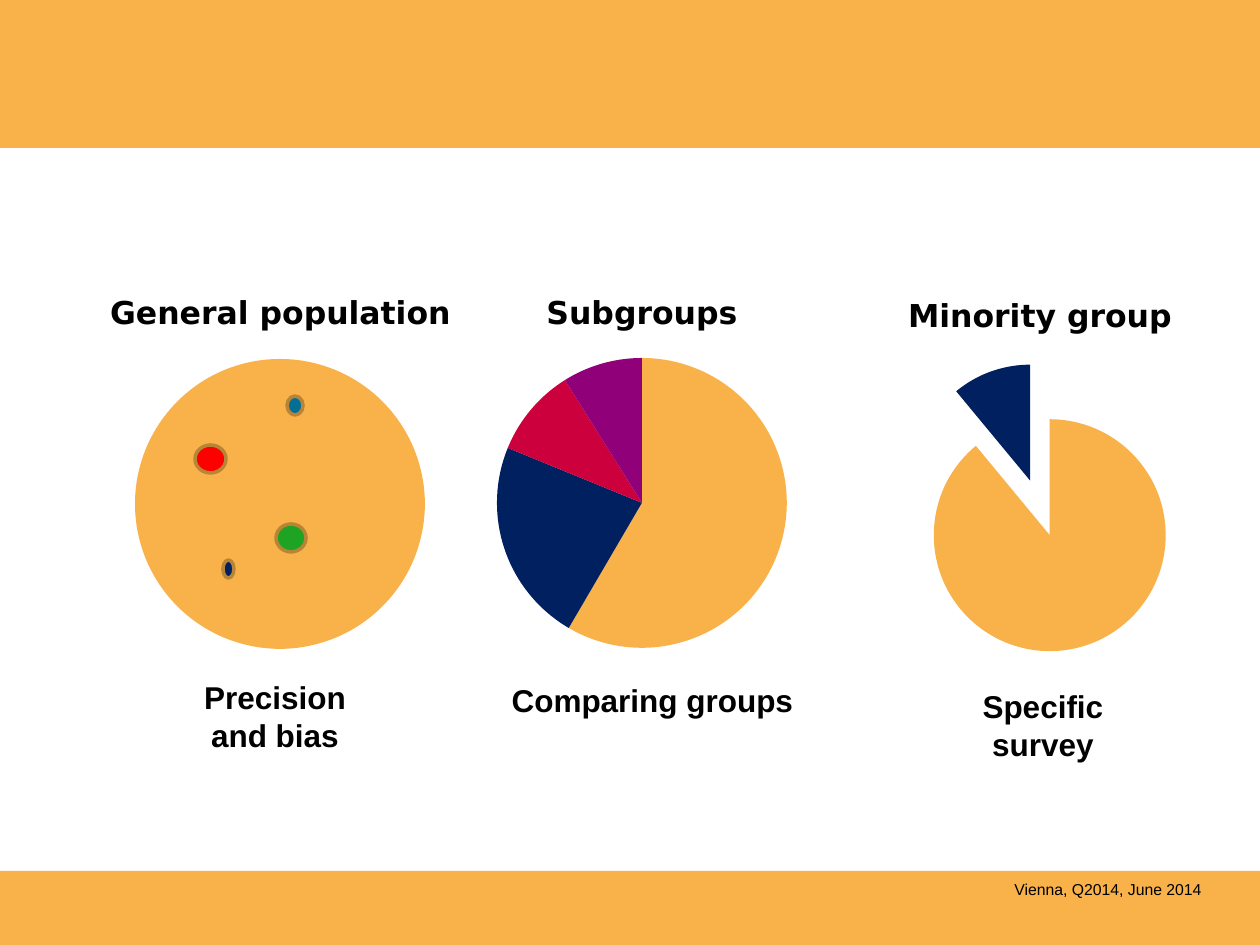
from dataclasses import dataclass

from lxml import etree
from pptx import Presentation, util as u
from pptx.chart.data import CategoryChartData
from pptx.dml.color import RGBColor
from pptx.enum import chart as charts, shapes, text
from pptx.oxml import parse_xml
from pptx.oxml.ns import nsdecls, qn


@dataclass(frozen=True)
class Theme:
    amber: str = "F9B249"
    navy: str = "002060"
    crimson: str = "CC003D"
    purple: str = "900079"
    red: str = "FF0000"
    green: str = "1FA323"
    blue: str = "046F96"
    rim: str = "B88436"
    ink: str = "000000"
    heading_font: str = "DejaVu Sans"
    body_font: str = "Arial"
    label_size: int = 18
    footer_size: int = 9


theme = Theme()
EMU_PER_PX = 914400 / 126
PIE_DIAMETER = 290


def px(*lengths):
    return [u.Emu(round(length * EMU_PER_PX)) for length in lengths]


def style(font, name, size, bold):
    font.name, font.size, font.bold = name, u.Pt(size), bold
    font.color.rgb = RGBColor.from_string(theme.ink)


prs = Presentation()
prs.slide_width, prs.slide_height = px(1260, 945)
slide = prs.slides.add_slide(prs.slide_layouts[6])

# Bands at the foot and head of the slide
for top, height in [(871, 74), (0, 148)]:
    band = slide.shapes.add_shape(shapes.MSO_SHAPE.RECTANGLE, *px(0, top, 1260, height))
    band.shadow.inherit = False
    band.fill.solid()
    band.fill.fore_color.rgb = RGBColor.from_string(theme.amber)
    band.line.fill.background()

# Pies: heading, chart box, pie left and top, values, slice colours, explosion
pies = [
    ("General population", (33, 272, 495, 396), (135, 359),
     [100], [theme.amber], 0),
    ("Subgroups", (406, 271, 472, 397), (497, 358),
     [59, 23, 10, 9], [theme.amber, theme.navy, theme.crimson, theme.purple], 0),
    ("Minority group", (820, 275, 440, 396), (895, 363),
     [89, 11], [theme.amber, theme.navy], 25),
]
for heading, box, (pie_left, pie_top), values, colours, explosion in pies:
    data = CategoryChartData()
    data.categories = [str(n) for n in range(1, len(values) + 1)]
    data.add_series("Series 1", values)
    pie = slide.shapes.add_chart(charts.XL_CHART_TYPE.PIE, *px(*box), data).chart
    style(pie.font, theme.heading_font, theme.label_size, False)
    pie.has_legend = False
    pie.has_title = True
    title = pie.chart_title.text_frame.paragraphs[0].add_run()
    title.text = heading
    style(title.font, theme.heading_font, theme.label_size, True)
    pie.chart_title.include_in_layout = False

    series = pie.plots[0].series[0]
    for index, colour in enumerate(colours):
        wedge = series.points[index].format
        wedge.fill.solid()
        wedge.fill.fore_color.rgb = RGBColor.from_string(colour)
        wedge.line.fill.background()
    if explosion:
        series._element.find(qn("c:dPt")).addprevious(
            parse_xml(f'<c:explosion {nsdecls("c")} val="{explosion}"/>'))

    left, top, width, height = box
    plot_area = pie._chartSpace.chart.plotArea
    for automatic in plot_area.findall(qn("c:layout")):
        plot_area.remove(automatic)
    layout = etree.Element(qn("c:layout"))
    manual = etree.SubElement(layout, qn("c:manualLayout"))
    for tag, value in [
        ("layoutTarget", "inner"), ("xMode", "edge"), ("yMode", "edge"),
        ("x", (pie_left - left) / width), ("y", (pie_top - top) / height),
        ("w", PIE_DIAMETER / width), ("h", PIE_DIAMETER / height),
    ]:
        etree.SubElement(manual, qn(f"c:{tag}")).set("val", str(value))
    plot_area.insert(0, layout)

# Small groups scattered over the general population
for box, colour in [
    ((195, 445, 31, 28), theme.red),
    ((276, 524, 30, 28), theme.green),
    ((287, 396, 16, 19), theme.blue),
    ((223, 560, 11, 18), theme.navy),
]:
    group = slide.shapes.add_shape(shapes.MSO_SHAPE.OVAL, *px(*box))
    group.shadow.inherit = False
    group.fill.solid()
    group.fill.fore_color.rgb = RGBColor.from_string(colour)
    group.line.color.rgb = RGBColor.from_string(theme.rim)
    group.line.width = u.Pt(2)

# Captions under the pies, and the footer
centre, left_edge = text.PP_ALIGN.CENTER, text.PP_ALIGN.LEFT
for wording, box, size, bold, alignment in [
    ("Precision and bias", (180, 672, 190, 89), theme.label_size, True, centre),
    ("Comparing groups", (470, 675, 365, 50), theme.label_size, True, centre),
    ("Specific survey", (948, 681, 190, 89), theme.label_size, True, centre),
    ("Vienna, Q2014, June 2014", (1002, 874, 258, 33), theme.footer_size, False, left_edge),
]:
    frame = slide.shapes.add_textbox(*px(*box)).text_frame
    frame.word_wrap = True
    paragraph = frame.paragraphs[0]
    paragraph.alignment = alignment
    run = paragraph.add_run()
    run.text = wording
    style(run.font, theme.body_font, size, bold)

prs.save("out.pptx")
